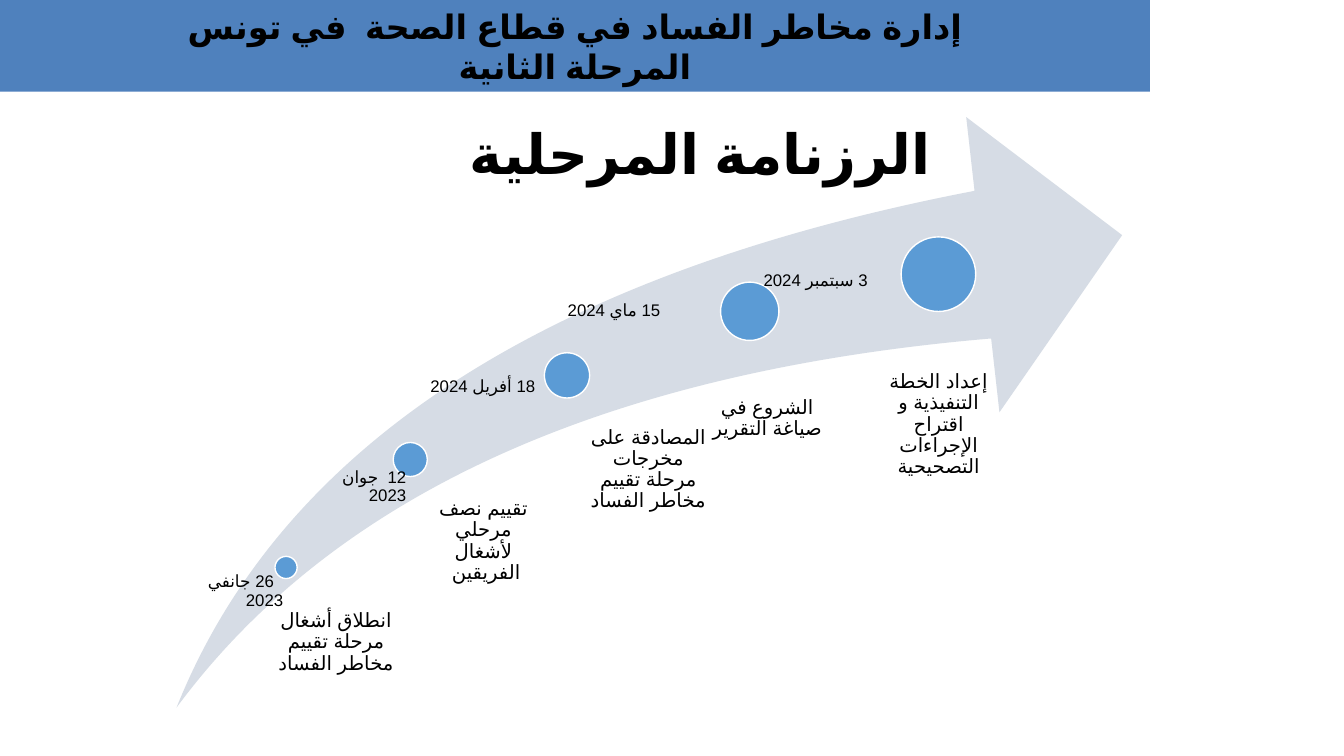
"""Build the slide with the phased calendar of the health sector project."""
from lxml import etree
from pptx import Presentation
from pptx.dml.color import RGBColor
from pptx.enum import shapes, text
from pptx.oxml import ns
from pptx.util import Cm, Pt

BLACK = RGBColor(0x00, 0x00, 0x00)
WHITE = RGBColor(0xFF, 0xFF, 0xFF)
BAND_BLUE = RGBColor(0x4F, 0x81, 0xBD)
DOT_BLUE = RGBColor(0x5B, 0x9B, 0xD5)
ARROW_GREY = RGBColor(0xD6, 0xDC, 0xE5)
CENTER, RIGHT = text.PP_ALIGN.CENTER, text.PP_ALIGN.RIGHT
TOP, MIDDLE = text.MSO_ANCHOR.TOP, text.MSO_ANCHOR.MIDDLE


def write(shape, words, size, bold=False, align=CENTER, anchor=TOP,
          margins=(0.25, 0.13, 0.25, 0.13), spacing=0.9, rtl=True):
    frame = shape.text_frame
    frame.word_wrap = True
    frame.auto_size = text.MSO_AUTO_SIZE.NONE
    frame.vertical_anchor = anchor
    (frame.margin_left, frame.margin_top,
     frame.margin_right, frame.margin_bottom) = map(Cm, margins)
    paragraph = frame.paragraphs[0]
    paragraph.text = words
    paragraph.alignment = align
    paragraph.line_spacing = spacing
    if rtl:
        paragraph._p.get_or_add_pPr().set("rtl", "1")
    for run in paragraph.runs:
        run.font.name = "Calibri"
        run.font.size = Pt(size)
        run.font.bold = bold
        run.font.color.rgb = BLACK
        properties = run._r.get_or_add_rPr()
        properties.set("lang", "ar-TN")
        etree.SubElement(properties, ns.qn("a:cs")).set("typeface", "Arial")


def add_filled(kind, box, color, line=None):
    shape = slide.shapes.add_shape(kind, *map(Cm, box))
    shape.shadow.inherit = False
    shape.fill.solid()
    shape.fill.fore_color.rgb = color
    if line is None:
        shape.line.fill.background()
    else:
        shape.line.color.rgb = line
        shape.line.width = Pt(1)
    return shape


presentation = Presentation()
presentation.slide_width = Cm(33.87)
presentation.slide_height = Cm(19.05)
slide = presentation.slides.add_slide(presentation.slide_layouts[5])

title = slide.shapes.title
title.left, title.top, title.width, title.height = map(Cm, (2.21, 3.18, 30.48, 1.55))
write(title, " الرزنامة المرحلية", 39.6, bold=True, anchor=MIDDLE, rtl=False)

arrow = add_filled(shapes.MSO_SHAPE.SWOOSH_ARROW, (4.45, 2.95, 23.83, 14.88), ARROW_GREY)
arrow.adjustments[0] = 0.25
arrow.adjustments[1] = 0.25

milestones = [
    ((6.93, 14.02, 0.56), "انطلاق أشغال مرحلة تقييم مخاطر الفساد", (6.48, 15.39, 3.68, 2.44),
     "  26 جانفي 2023", (3.53, 14.45, 3.61, 1.09)),
    ((9.91, 11.15, 0.86), "تقييم نصف مرحلي لأشغال الفريقين ", (10.24, 12.57, 3.43, 5.11),
     "12  جوان 2023", (6.86, 11.81, 3.38, 1.09)),
    ((13.72, 8.89, 1.14), "المصادقة على مخرجات مرحلة تقييم مخاطر الفساد", (14.22, 10.77, 3.63, 5.69),
     "18 أفريل 2024", (8.31, 9.53, 5.18, 1.22)),
    ((18.16, 7.11, 1.47), "الشروع في صياغة التقرير", (16.81, 10.01, 4.27, 7.37),
     " 15 ماي 2024", (11.58, 7.62, 5.18, 1.22)),
    ((22.71, 5.97, 1.88), "إعداد الخطة التنفيذية و اقتراح الإجراءات التصحيحية", (21.34, 9.37, 3.63, 6.07),
     "3 سبتمبر 2024", (16.69, 6.86, 5.18, 1.22)),
]
for (left, top, diameter), task, task_box, date, date_box in milestones:
    add_filled(shapes.MSO_SHAPE.OVAL, (left, top, diameter, diameter), DOT_BLUE, line=WHITE)
    task_label = slide.shapes.add_textbox(*map(Cm, task_box))
    write(task_label, task, 14, margins=(0.53 * diameter, 0, 0, 0))
    date_label = slide.shapes.add_textbox(*map(Cm, date_box))
    write(date_label, date, 12, align=RIGHT, margins=(0.86, 0, 0, 0))

band = add_filled(shapes.MSO_SHAPE.RECTANGLE, (0, 0, 28.98, 2.31), BAND_BLUE)
write(band, "إدارة مخاطر الفساد في قطاع الصحة  في تونس\nالمرحلة الثانية", 24,
      bold=True, anchor=MIDDLE, spacing=1.0, rtl=False)

presentation.save("out.pptx")
